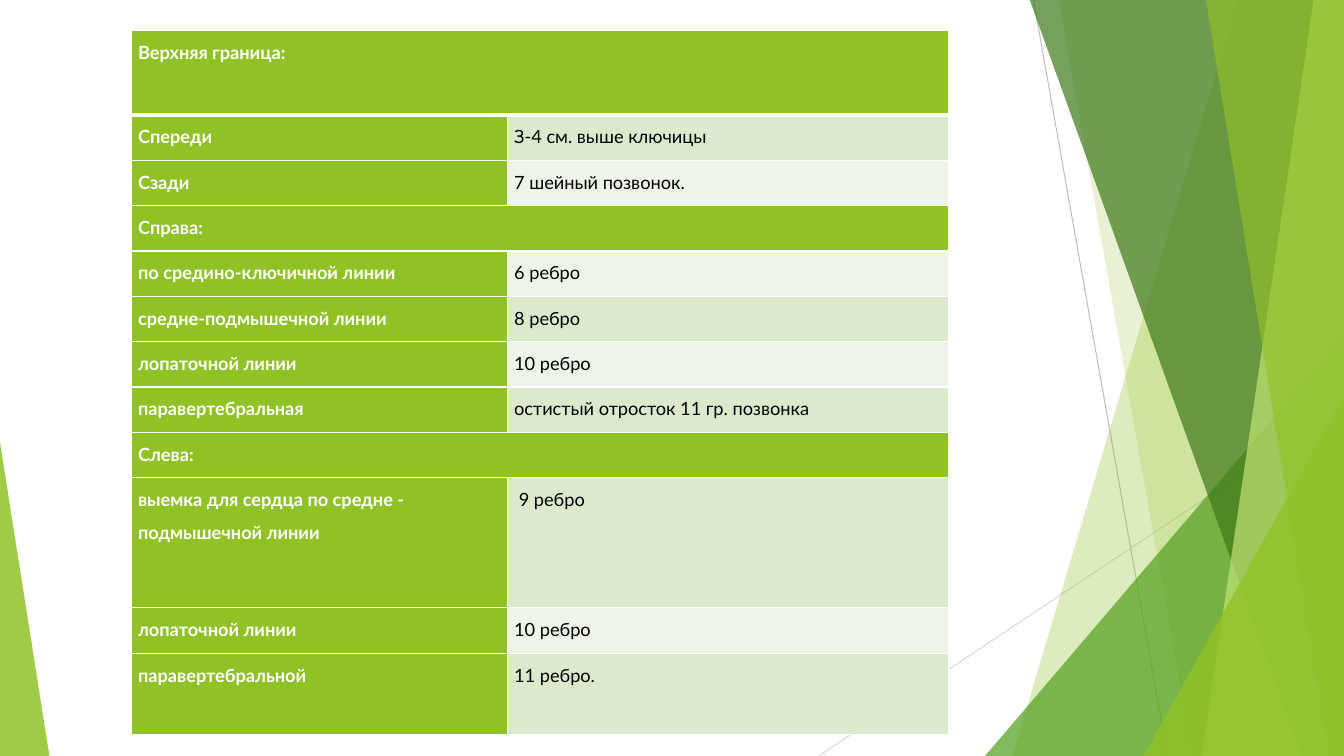
from lxml.etree import SubElement
from pptx import Presentation
from pptx.dml.color import RGBColor
from pptx.enum.shapes import MSO_CONNECTOR as Connector, MSO_SHAPE as Shape
from pptx.oxml.ns import qn
from pptx.util import Inches, Pt

WHITE = RGBColor(0xFF, 0xFF, 0xFF)
BLACK = RGBColor(0x00, 0x00, 0x00)
LIME = RGBColor(0x90, 0xC2, 0x26)
PALE_LIME = RGBColor(0xC0, 0xE4, 0x74)
GREEN = RGBColor(0x54, 0xA0, 0x21)
DARK_GREEN = RGBColor(0x3F, 0x78, 0x19)
BAND_DARK = RGBColor(0xDB, 0xE9, 0xCD)
BAND_LIGHT = RGBColor(0xEE, 0xF4, 0xE8)
GRAY = RGBColor(0xBF, 0xBF, 0xBF)
LIGHT_GRAY = RGBColor(0xD9, 0xD9, 0xD9)

WIDTH, HEIGHT = 13.33, 7.5
TOP = -0.01

# Label, value (None: section heading across both columns), row height
ROW = 0.45
BORDERS = [
    ("Верхняя граница:", None, 0.84),
    ("Спереди", "З-4 см. выше ключицы", ROW),
    ("Сзади", "7 шейный позвонок.", ROW),
    ("Справа:", None, ROW),
    ("по средино-ключичной линии", "6 ребро", ROW),
    ("средне-подмышечной линии", "8 ребро", ROW),
    ("лопаточной линии", "10 ребро", ROW),
    ("паравертебральная", "остистый отросток 11 гр. позвонка", ROW),
    ("Слева:", None, ROW),
    ("выемка для сердца по средне - подмышечной линии", " 9 ребро", 1.29),
    ("лопаточной линии", "10 ребро", ROW),
    ("паравертебральной", "11 ребро.", 0.81),
]


def add_line(page, start, end, color):
    ends = [Inches(value) for value in (*start, *end)]
    line = page.shapes.add_connector(Connector.STRAIGHT, *ends)
    line.line.color.rgb = color
    line.line.width = Pt(0.75)
    SubElement(line._element.spPr, qn("a:effectLst"))


def paint(shape, color, opacity):
    shape.shadow.inherit = False
    shape.line.fill.background()
    shape.fill.solid()
    shape.fill.fore_color.rgb = color
    tone = shape._element.spPr.find(qn("a:solidFill"))[0]
    SubElement(tone, qn("a:alpha")).set("val", str(opacity * 1000))


def add_ray(page, top_x, bottom_x, color, opacity):
    """A band from a slanted left side to the right edge of the slide."""
    corners = [(WIDTH, TOP), (WIDTH, HEIGHT), (bottom_x, HEIGHT)]
    outline = page.shapes.build_freeform(Inches(top_x), Inches(TOP))
    outline.add_line_segments([(Inches(x), Inches(y)) for x, y in corners])
    paint(outline.convert_to_shape(), color, opacity)


def add_corner(page, left, top, width, apex, color, opacity):
    """A triangle that stands on the bottom edge of the slide."""
    size = [Inches(value) for value in (left, top, width, HEIGHT - top)]
    corner = page.shapes.add_shape(Shape.ISOSCELES_TRIANGLE, *size)
    corner.adjustments[0] = apex
    paint(corner, color, opacity)


def add_decoration(page):
    add_line(page, (10.25, 0), (11.58, HEIGHT), GRAY)
    add_line(page, (WIDTH, 4.03), (8.12, HEIGHT), LIGHT_GRAY)
    add_ray(page, 12.28, 10.04, LIME, 30)
    add_ray(page, 10.5, 11.83, LIME, 20)
    add_corner(page, 9.77, 3.33, 3.56, 1, GREEN, 72)
    add_ray(page, 10.21, 12.91, DARK_GREEN, 70)
    add_ray(page, 13.03, 11.92, PALE_LIME, 70)
    add_ray(page, 11.96, 13.18, LIME, 65)
    add_corner(page, 11.34, 3.93, 1.99, 1, LIME, 80)
    add_corner(page, 0, 4.39, 0.49, 0, LIME, 85)


def set_borders(cell, bottom):
    props = cell._tc.get_or_add_tcPr()
    sides = [("a:lnL", 1), ("a:lnR", 1), ("a:lnT", 1), ("a:lnB", bottom)]
    for place, (side, width) in enumerate(sides):
        edge = SubElement(props, qn(side), w=str(Pt(width)))
        fill = SubElement(edge, qn("a:solidFill"))
        SubElement(fill, qn("a:srgbClr"), val=str(WHITE))
        props.insert(place, edge)


def write_cell(cell, text, *, fill, color, bold=False, bottom=1):
    cell.margin_left = cell.margin_right = Inches(0.07)
    cell.margin_top = cell.margin_bottom = 0
    cell.fill.solid()
    cell.fill.fore_color.rgb = fill
    set_borders(cell, bottom)
    para = cell.text_frame.paragraphs[0]
    para.line_spacing = 1.5
    span = para.add_run()
    span.text = text
    span.font.name = "Lato"
    span.font.size = Pt(13)
    span.font.bold = bold
    span.font.color.rgb = color


def add_border_table(page):
    frame = page.shapes.add_table(len(BORDERS), 2, Inches(1.3), Inches(0.3),
                                  Inches(8.11), Inches(6.96))
    table = frame.table
    for column, width in zip(table.columns, (3.73, 4.38)):
        column.width = Inches(width)
    for index, (label, value, height) in enumerate(BORDERS):
        table.rows[index].height = Inches(height)
        first, second = table.cell(index, 0), table.cell(index, 1)
        bottom = 3 if index == 0 else 1
        write_cell(first, label, fill=LIME, color=WHITE, bold=True, bottom=bottom)
        if value is None:
            set_borders(second, bottom)
            first.merge(second)
        else:
            band = BAND_DARK if index % 2 else BAND_LIGHT
            write_cell(second, value, fill=band, color=BLACK)


def main():
    deck = Presentation()
    deck.slide_width, deck.slide_height = Inches(WIDTH), Inches(HEIGHT)
    page = deck.slides.add_slide(deck.slide_layouts[6])
    add_decoration(page)
    add_border_table(page)
    deck.save("out.pptx")


if __name__ == "__main__":
    main()
